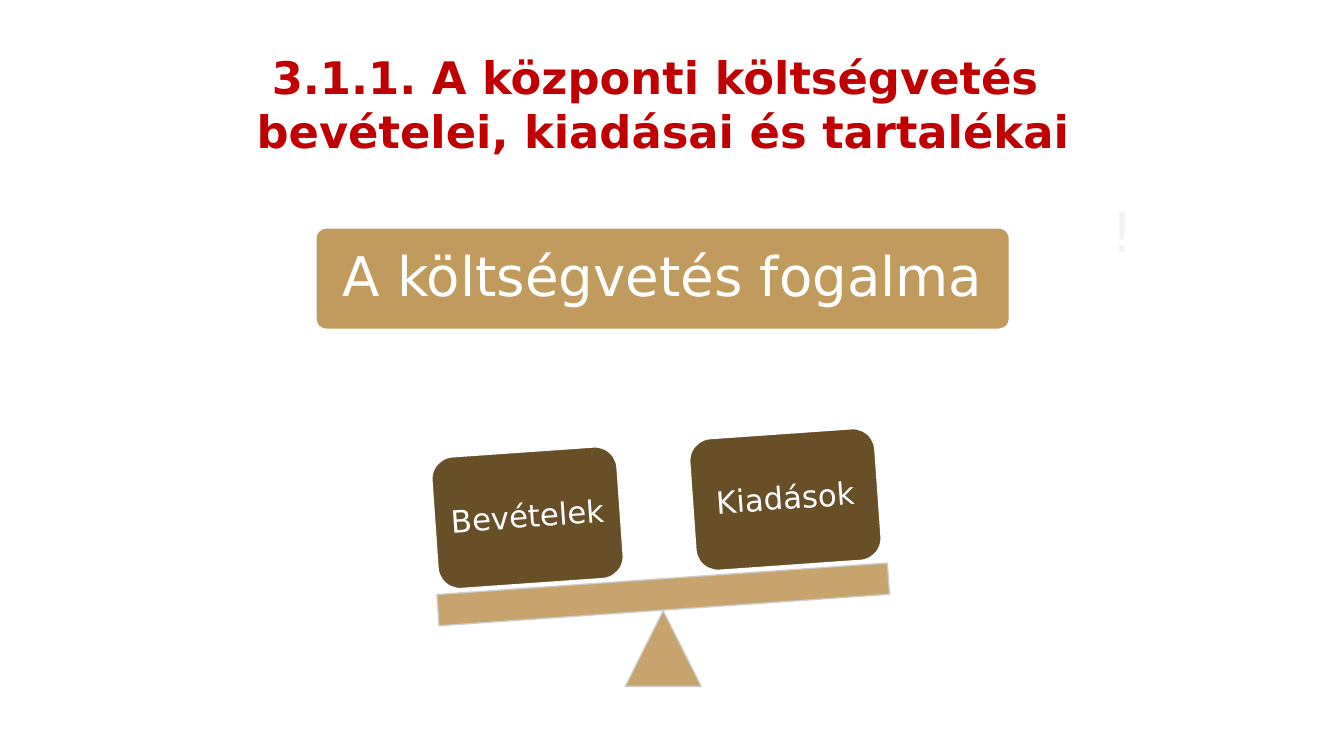
from dataclasses import dataclass

from lxml.etree import SubElement
from pptx import Presentation
from pptx.dml.color import RGBColor
from pptx.enum.shapes import MSO_SHAPE as Preset
from pptx.enum.text import MSO_ANCHOR as Anchor, MSO_AUTO_SIZE as AutoSize, PP_ALIGN as Align
from pptx.oxml.ns import qn
from pptx.util import Inches, Pt


@dataclass(frozen=True)
class Theme:
    font: str = "DejaVu Sans"
    heading: str = "C00000"
    sand: str = "C19A5E"
    brown: str = "684F28"
    edge: str = "CCCCCC"
    white: str = "FFFFFF"
    pale: str = "F2F2F2"
    title_size: int = 32
    banner_size: int = 39
    weight_size: int = 22
    opacity: int = 90
    tilt: int = 356


@dataclass(frozen=True)
class Box:
    left: float
    top: float
    width: float
    height: float

    def percent(self, left, top, width, height):
        return Box(
            self.left + self.width * left / 100,
            self.top + self.height * top / 100,
            self.width * width / 100,
            self.height * height / 100,
        )

    def lengths(self):
        return [Inches(side) for side in (self.left, self.top, self.width, self.height)]


THEME = Theme()
SLIDE = Box(0, 0, 13.33, 7.5)


def write(shape, text, size, color, bold=False, inset=None, spacing=None):
    frame = shape.text_frame
    frame.auto_size = AutoSize.NONE
    frame.word_wrap = True
    frame.vertical_anchor = Anchor.MIDDLE
    if inset is not None:
        frame.margin_left = frame.margin_right = Inches(inset)
        frame.margin_top = frame.margin_bottom = Inches(inset)
    paragraph = frame.paragraphs[0]
    paragraph.alignment = Align.CENTER
    if spacing:
        paragraph.line_spacing = spacing
    for index, line in enumerate(text.split("\n")):
        if index:
            paragraph.add_line_break()
        run = paragraph.add_run()
        run.text = line
        run.font.name = THEME.font
        run.font.size = Pt(size)
        run.font.bold = bold
        run.font.color.rgb = RGBColor.from_string(color)


def set_opacity(properties, percent):
    for color in properties.iter(qn("a:srgbClr")):
        SubElement(color, qn("a:alpha")).set("val", str(percent * 1000))


def add_block(slide, preset, box, fill, line=None, rotation=0, opacity=100):
    shape = slide.shapes.add_shape(preset, *box.lengths())
    shape.shadow.inherit = False
    shape.rotation = rotation
    shape.fill.solid()
    shape.fill.fore_color.rgb = RGBColor.from_string(fill)
    if line:
        shape.line.color.rgb = RGBColor.from_string(line)
        shape.line.width = Pt(1)
    else:
        shape.line.fill.background()
    if opacity < 100:
        set_opacity(shape.element.spPr, opacity)
    return shape


def add_title(slide, box):
    title = slide.shapes.title
    title.left, title.top, title.width, title.height = box.lengths()
    write(title, "3.1.1. A központi költségvetés \nbevételei, kiadásai és tartalékai",
          THEME.title_size, THEME.heading, bold=True)


def add_banner(slide, box):
    banner = add_block(slide, Preset.ROUNDED_RECTANGLE, box, THEME.sand)
    banner.adjustments[0] = 0.1
    write(banner, "A költségvetés fogalma", THEME.banner_size, THEME.white,
          inset=0.19, spacing=0.9)


def add_mark(slide, box):
    mark = slide.shapes.add_textbox(*box.lengths())
    write(mark, "!", THEME.banner_size, THEME.pale, inset=0.16, spacing=0.9)


def add_balance(slide, box):
    add_block(slide, Preset.ISOSCELES_TRIANGLE, box.percent(41.6, 70.1, 16.8, 29.9),
              THEME.sand, THEME.edge, opacity=THEME.opacity)
    add_block(slide, Preset.RECTANGLE, box.percent(0, 57.4, 100, 12.4),
              THEME.sand, THEME.edge, THEME.tilt, THEME.opacity)
    for label, left, top in (("Bevételek", -0.6, 7.2), ("Kiadások", 56.5, 0)):
        weight = add_block(slide, Preset.ROUNDED_RECTANGLE, box.percent(left, top, 41.1, 52.2),
                           THEME.brown, THEME.white, THEME.tilt)
        write(weight, label, THEME.weight_size, THEME.white, inset=0.09, spacing=0.9)


def main():
    presentation = Presentation()
    presentation.slide_width = Inches(SLIDE.width)
    presentation.slide_height = Inches(SLIDE.height)
    slide = presentation.slides.add_slide(presentation.slide_layouts[5])
    add_title(slide, SLIDE.percent(13, 6.4, 72.7, 14.7))
    add_banner(slide, SLIDE.percent(23.55, 30.25, 51.5, 13.2))
    add_mark(slide, SLIDE.percent(78.5, 24.8, 10, 12.5))
    add_balance(slide, SLIDE.percent(32.55, 57.35, 33.6, 33.45))
    presentation.save("out.pptx")


if __name__ == "__main__":
    main()
